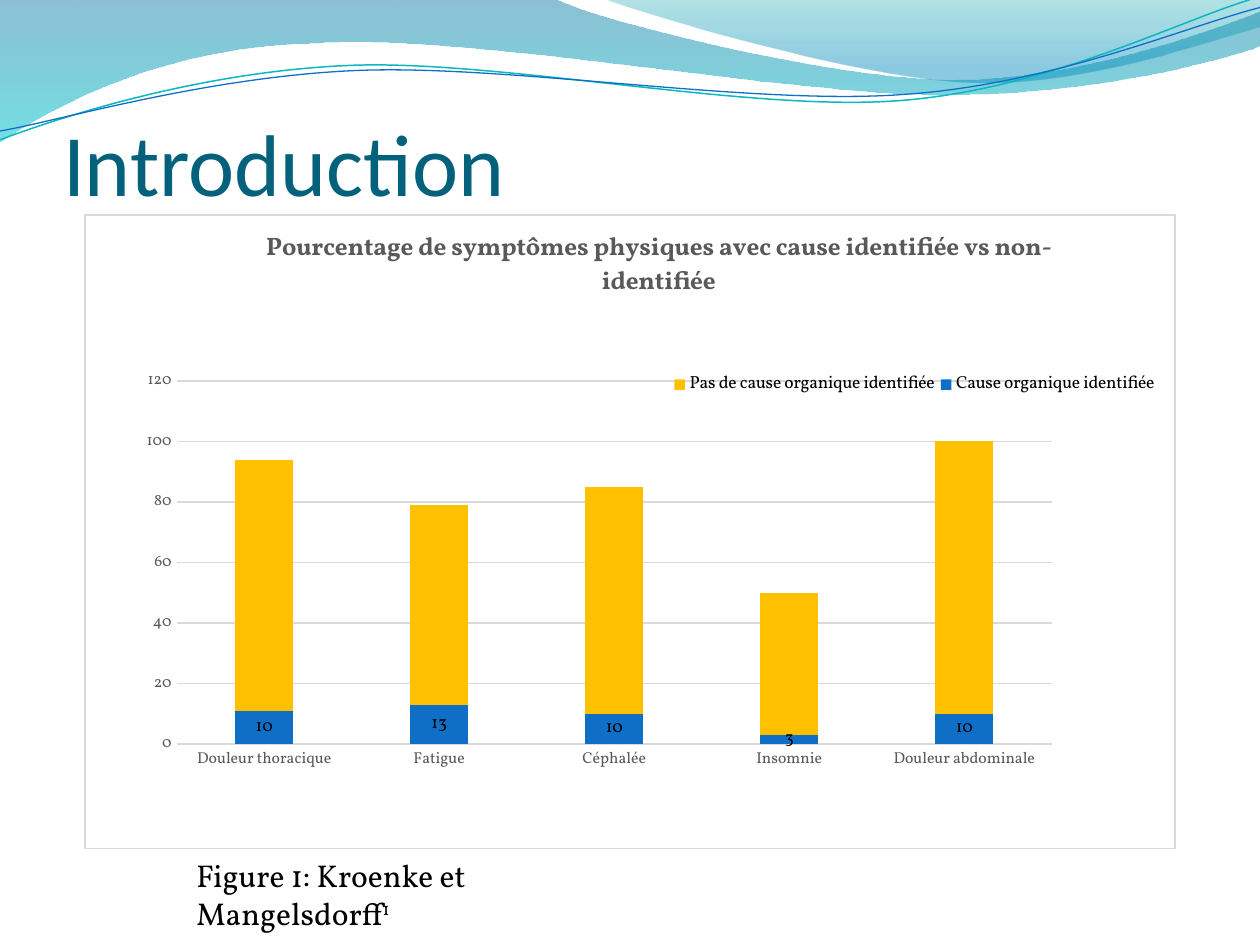
from lxml import etree
from pptx import Presentation
from pptx import util as u
from pptx.chart.data import CategoryChartData
from pptx.dml.color import RGBColor
from pptx.enum import chart as charts, text
from pptx.oxml import parse_xml
from pptx.oxml.ns import nsdecls, qn

WIDTH, HEIGHT = 10, 7.5
UNITS = 1000  # freeform units to the inch
COLORS = {
    "title": "04617B", "black": "000000", "grey": "595959", "grid": "D9D9D9",
    "white": "FFFFFF", "blue": "0F6FC6", "yellow": "FFC000", "teal": "0AB8BF",
}
BODY_FONT = "Vollkorn"

# Waves: a start point, then straight (2 numbers) or cubic (6 numbers) steps.
# Gradient stops: share, colour, opacity in percent.
FILLED_WAVES = [
    ([(0, 0), (4.4, -0.01), (4.76, 0.17, 6.64, 0.63, 7.58, 0.63),
      (8.53, 0.63, 9.58, 0.26, 10, 0.09), (10.01, 0.36),
      (9.83, 0.44, 8.7, 0.76, 7.46, 0.75), (6.22, 0.75, 3.82, 0.28, 2.57, 0.34),
      (1.29, 0.36, 0.46, 0.83, -0.01, 1.13)],
     [(0, "0074A1", 45), (1, "00C6CF", 55)]),
    ([(4.79, -0.01), (5.09, 0.11, 6.82, 0.62, 7.69, 0.65),
      (8.56, 0.69, 9.61, 0.32, 10, 0.21), (10, 0)],
     [(0, "00A1A9", 30), (0.8, "008BBF", 45)]),
]
LINE_WAVES = [
    ([(0, 1.11), (0.48, 0.93, 1.58, 0.57, 2.77, 0.52),
      (3.95, 0.47, 5.93, 0.89, 7.13, 0.8), (8.33, 0.71, 9.38, 0.15, 9.98, -0.02)],
     "teal", 0.85),
    ([(0, 1.04), (0.47, 0.96, 1.64, 0.61, 2.83, 0.56),
      (4.03, 0.51, 5.97, 0.84, 7.17, 0.75), (8.36, 0.67, 9.41, 0.21, 10, 0.06)],
     "blue", 0.75),
]

CATEGORIES = ["Douleur thoracique", "Fatigue", "Céphalée", "Insomnie",
              "Douleur abdominale"]
SERIES = [
    ("Cause organique identifiée", (11, 13, 10, 3, 10), "blue"),
    ("Pas de cause organique identifiée", (83, 66, 75, 47, 90), "yellow"),
]


def rgb(name):
    return RGBColor.from_string(COLORS.get(name, name))


def style_font(font, size, color="black", name=BODY_FONT, bold=False):
    for key, value in {"size": u.Pt(size), "name": name, "bold": bold}.items():
        setattr(font, key, value)
    font.color.rgb = rgb(color)


def place(shape, left, top, width, height):
    """Position a shape by shares of the slide's size."""
    values = {"left": left * WIDTH, "top": top * HEIGHT,
              "width": width * WIDTH, "height": height * HEIGHT}
    for key, value in values.items():
        setattr(shape, key, u.Inches(value))


def add_wave(page, steps, closed):
    """Join the end points of all steps, then bend the cubic ones."""
    steps = [[round(value * UNITS) for value in step] for step in steps]
    ends = [tuple(step[-2:]) for step in steps]
    builder = page.shapes.build_freeform(*ends[0], scale=u.Inches(1) / UNITS)
    builder.add_line_segments(ends[1:], close=closed)
    wave = builder.convert_to_shape()
    wave.shadow.inherit = False
    corner = [min(values) for values in zip(*ends)]
    segments = list(wave._element.iter(qn("a:lnTo")))
    for segment, step in zip(segments, steps[1:]):
        if len(step) == 6:
            segment.addprevious(bend(step, corner))
            segment.getparent().remove(segment)
    return wave


def bend(step, corner):
    curve = etree.Element(qn("a:cubicBezTo"))
    for x, y in zip(step[::2], step[1::2]):
        etree.SubElement(curve, qn("a:pt"), x=str(x - corner[0]), y=str(y - corner[1]))
    return curve


def add_filled_wave(page, steps, stops):
    wave = add_wave(page, steps, True)
    wave.line.fill.background()
    wave.fill.gradient()
    wave.fill.gradient_angle = 270
    for stop, (share, color, _) in zip(wave.fill.gradient_stops, stops):
        stop.position = share
        stop.color.rgb = rgb(color)
    for node, (_, _, opacity) in zip(wave._element.spPr.iter(qn("a:srgbClr")), stops):
        etree.SubElement(node, qn("a:alpha"), val=str(opacity * 1000))


def add_line_wave(page, steps, color, width):
    wave = add_wave(page, steps, False)
    wave.fill.background()
    wave.line.color.rgb = rgb(color)
    wave.line.width = u.Pt(width)


def format_title(page):
    title = page.shapes.title
    place(title, 0.05, 0.07, 0.9, 0.157)
    frame = title.text_frame
    settings = {"margin_left": 0, "margin_right": 0, "margin_bottom": 0,
                "margin_top": u.Inches(0.05), "word_wrap": True,
                "vertical_anchor": text.MSO_ANCHOR.BOTTOM}
    for key, value in settings.items():
        setattr(frame, key, value)
    para = frame.paragraphs[0]
    para.alignment = text.PP_ALIGN.LEFT
    span = para.add_run()
    span.text = "Introduction"
    style_font(span.font, 50, "title", "Calibri")


def add_caption(page):
    box = page.shapes.add_textbox(0, 0, 0, 0)
    place(box, 0.146, 0.899, 0.387, 0.053)
    box.text_frame.word_wrap = True
    para = box.text_frame.paragraphs[0]
    for wording in ("Figure 1: Kroenke et Mangelsdorff", "1"):
        span = para.add_run()
        span.text = wording
        style_font(span.font, 18)
    span.font._element.set("baseline", "30000")


def set_layout(parent, index, **shares):
    """Fix the place of a chart part by shares of the chart's size."""
    for old in parent.findall(qn("c:layout")):
        parent.remove(old)
    inner = '<c:layoutTarget val="inner"/>' if parent.tag == qn("c:plotArea") else ""
    modes = "".join(f'<c:{key}Mode val="edge"/>' for key in ("x", "y"))
    sizes = "".join(f'<c:{key} val="{value}"/>' for key, value in shares.items())
    parent.insert(index, parse_xml(
        f'<c:layout {nsdecls("c")}><c:manualLayout>{inner}{modes}{sizes}'
        '</c:manualLayout></c:layout>'))


def format_axes(chart):
    for axis in (chart.category_axis, chart.value_axis):
        axis.major_tick_mark = axis.minor_tick_mark = charts.XL_TICK_MARK.NONE
        style_font(axis.tick_labels.font, 9, "grey")
    values = chart.value_axis
    values.minimum_scale, values.maximum_scale, values.major_unit = 0, 120, 20
    values.format.line.fill.background()
    for line in (chart.category_axis.format.line, values.major_gridlines.format.line):
        line.color.rgb = rgb("grid")
        line.width = u.Pt(0.75)


def format_series(plot):
    plot.gap_width, plot.overlap, plot.vary_by_categories = 200, 100, False
    for series, (_, _, color) in zip(plot.series, SERIES):
        series.format.fill.solid()
        series.format.fill.fore_color.rgb = rgb(color)
    known = plot.series[0]
    first = known.points[0].data_label
    first.text_frame.text = "10"
    style_font(first.text_frame.paragraphs[0].runs[0].font, 10)
    known.data_labels.show_value = True
    style_font(known.data_labels.font, 10)


def add_symptom_chart(page):
    data = CategoryChartData()
    data.categories = CATEGORIES
    for name, values, _ in SERIES:
        data.add_series(name, values)
    frame = page.shapes.add_chart(charts.XL_CHART_TYPE.COLUMN_STACKED, 0, 0, 1, 1, data)
    place(frame, 0.067, 0.2267, 0.866, 0.672)
    chart = frame.chart
    style_font(chart.font, 10)

    # Heading and legend
    heading = chart.chart_title.text_frame
    heading.text = "Pourcentage de symptômes physiques avec cause identifiée vs non-identifiée"
    style_font(heading.paragraphs[0].runs[0].font, 14.4, "grey", bold=True)
    set_layout(chart.chart_title._element, 1, x=0.162, y=0.015)
    chart.has_legend = True
    chart.legend.position = charts.XL_LEGEND_POSITION.RIGHT
    chart.legend.include_in_layout = False
    style_font(chart.legend.font, 10)
    set_layout(chart.legend._element, 1, x=0.535, y=0.248, w=0.452, h=0.04)

    # Plot, axes and frame
    format_axes(chart)
    format_series(chart.plots[0])
    body = chart._chartSpace.find(qn("c:chart"))
    set_layout(body.find(qn("c:plotArea")), 0, x=0.084, y=0.262, w=0.803, h=0.573)
    body.addnext(parse_xml(
        f'<c:spPr {nsdecls("c", "a")}><a:solidFill><a:srgbClr val="{COLORS["white"]}"/>'
        f'</a:solidFill><a:ln w="{u.Pt(0.75)}"><a:solidFill>'
        f'<a:srgbClr val="{COLORS["grid"]}"/></a:solidFill></a:ln></c:spPr>'))


def main():
    deck = Presentation()
    deck.slide_width, deck.slide_height = u.Inches(WIDTH), u.Inches(HEIGHT)
    page = deck.slides.add_slide(deck.slide_layouts[5])
    for steps, stops in FILLED_WAVES:
        add_filled_wave(page, steps, stops)
    for steps, color, width in LINE_WAVES:
        add_line_wave(page, steps, color, width)
    format_title(page)
    add_caption(page)
    add_symptom_chart(page)
    deck.save("out.pptx")


if __name__ == "__main__":
    main()
